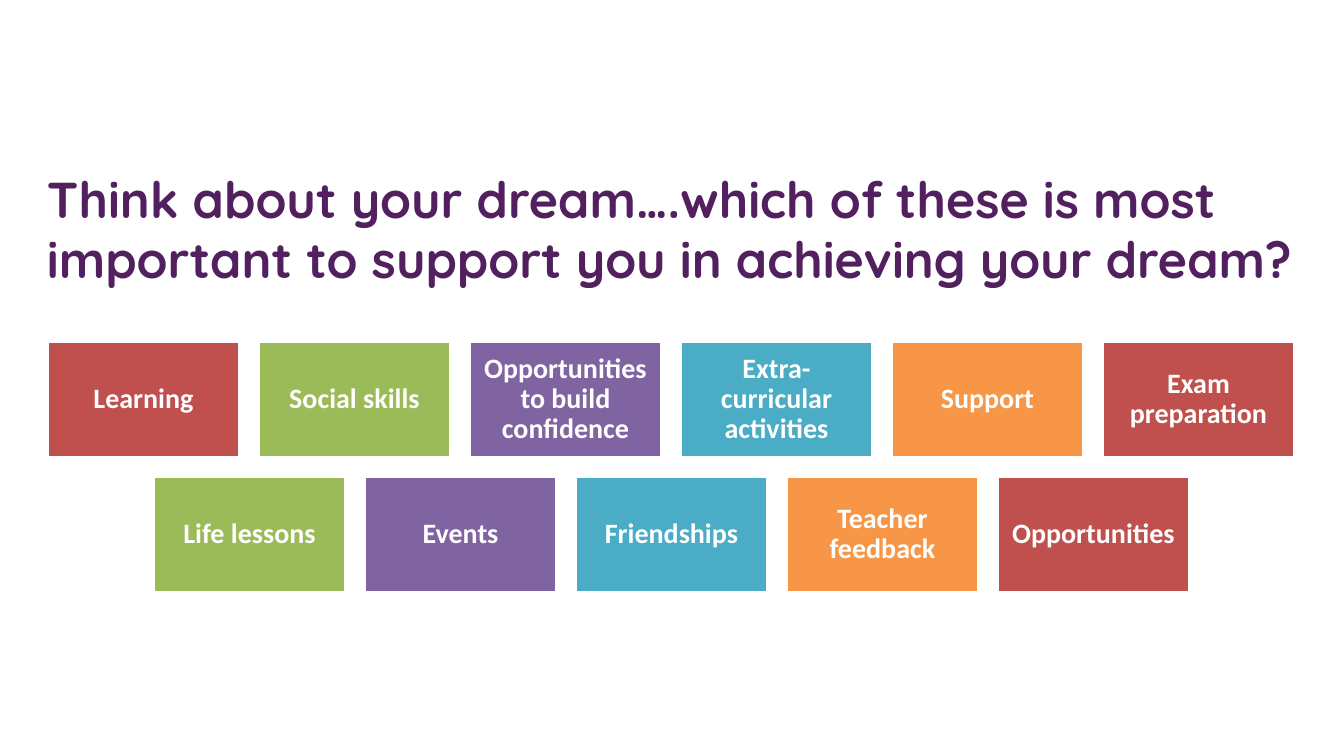
import pptx
import pptx.dml.color
import pptx.enum.shapes
import pptx.enum.text
import pptx.util

PX = 914400 / 100.8


def px(length):
    return pptx.util.Emu(round(length * PX))


def color(hex_value):
    return pptx.dml.color.RGBColor.from_string(hex_value)


deck = pptx.Presentation()
deck.slide_width, deck.slide_height = px(1344), px(756)
slide = deck.slides.add_slide(deck.slide_layouts[6])
no_margins = dict.fromkeys(["margin_left", "margin_top", "margin_right", "margin_bottom"], 0)

# Question
question = slide.shapes.add_textbox(px(47), px(168), px(1271), px(122)).text_frame
question_format = {
    **no_margins,
    "word_wrap": True,
    "auto_size": pptx.enum.text.MSO_AUTO_SIZE.SHAPE_TO_FIT_TEXT,
}
for key, value in question_format.items():
    setattr(question, key, value)
wording = question.paragraphs[0]
wording.text = "Think about your dream….which of these is most important to support you in achieving your dream?"
for key, value in {"name": "Quicksand", "size": pptx.util.Pt(36), "bold": True}.items():
    setattr(wording.font, key, value)
wording.font.color.rgb = color("52205E")

# Answer tiles: two centred rows, colours running on from one row to the next
ANSWER_ROWS = [
    ["Learning", "Social skills", "Opportunities to build confidence",
     "Extra-curricular activities", "Support", "Exam preparation"],
    ["Life lessons", "Events", "Friendships", "Teacher feedback", "Opportunities"],
]
TILE_COLORS = ["C0504D", "9BBB59", "8064A2", "4BACC6", "F79646"]
TILE_WIDTH, TILE_HEIGHT, GAP = 191, 115, 20
ROWS_CENTER, ROWS_TOP = 671, 342

tile_format = {
    **dict.fromkeys(no_margins, px(8)),
    "word_wrap": True,
    "vertical_anchor": pptx.enum.text.MSO_ANCHOR.MIDDLE,
}
answer_format = {"alignment": pptx.enum.text.PP_ALIGN.CENTER, "line_spacing": 0.9}
answer_font = {"name": "Calibri", "size": pptx.util.Pt(20), "bold": True}

tile_count = 0
for row, answers in enumerate(ANSWER_ROWS):
    row_width = len(answers) * (TILE_WIDTH + GAP) - GAP
    row_left = ROWS_CENTER - row_width // 2
    for column, answer in enumerate(answers):
        tile = slide.shapes.add_shape(
            pptx.enum.shapes.MSO_SHAPE.RECTANGLE,
            px(row_left + column * (TILE_WIDTH + GAP)),
            px(ROWS_TOP + row * (TILE_HEIGHT + GAP)),
            px(TILE_WIDTH), px(TILE_HEIGHT))
        tile.shadow.inherit = False
        tile.fill.solid()
        tile.fill.fore_color.rgb = color(TILE_COLORS[tile_count % len(TILE_COLORS)])
        tile.line.color.rgb = color("FFFFFF")
        tile.line.width = pptx.util.Pt(2)
        tile_count += 1

        label = tile.text_frame.paragraphs[0]
        label.text = answer
        for target, settings in [(tile.text_frame, tile_format),
                                 (label, answer_format), (label.font, answer_font)]:
            for key, value in settings.items():
                setattr(target, key, value)
        label.font.color.rgb = color("FFFFFF")

deck.save("out.pptx")
